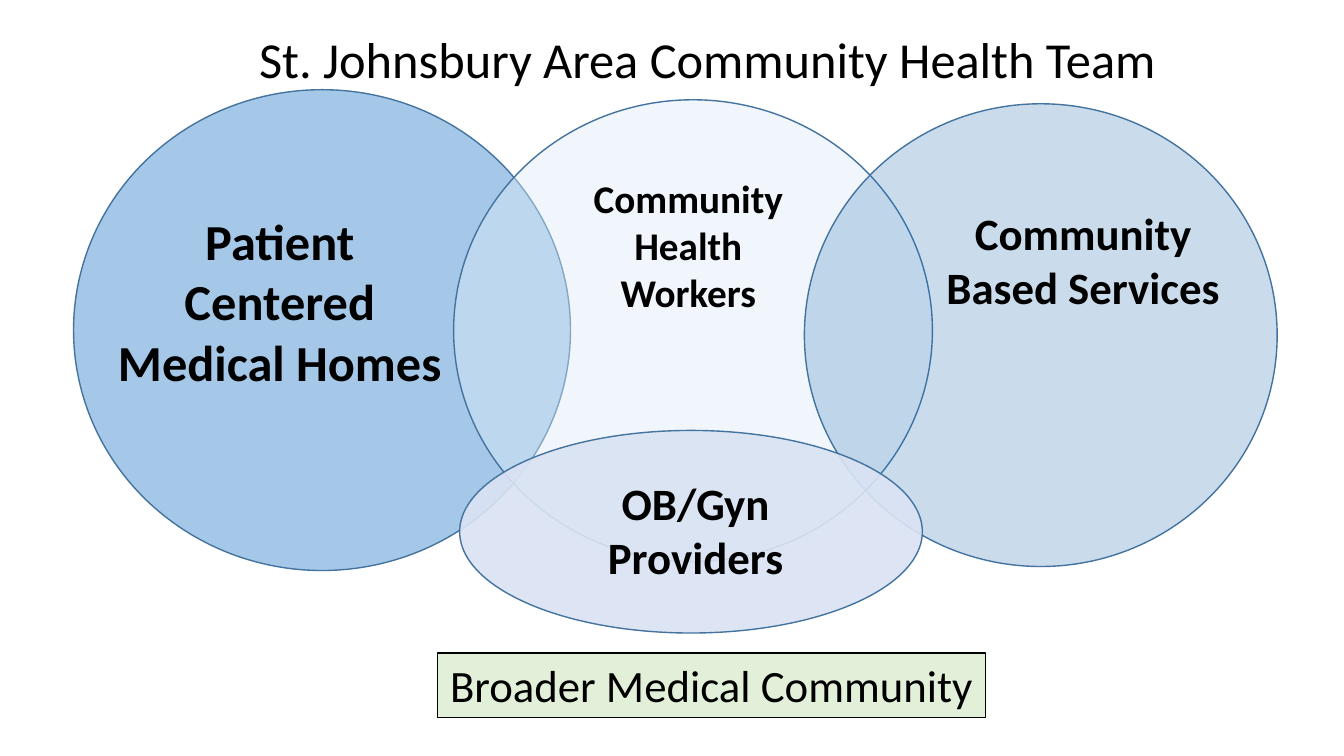
from dataclasses import dataclass

from lxml.etree import SubElement
from pptx import Presentation
from pptx.dml.color import RGBColor
from pptx.enum.shapes import MSO_SHAPE as Shape
from pptx.enum.text import MSO_ANCHOR as Anchor, MSO_AUTO_SIZE as AutoSize, PP_ALIGN as Align
from pptx.oxml.ns import qn
from pptx.util import Inches, Pt


@dataclass(frozen=True)
class Theme:
    font: str = "Calibri"
    ink: str = "000000"
    outline: str = "43739E"
    homes: str = "9DC3E6"
    workers: str = "DEEBF7"
    services: str = "2E75B6"
    providers: str = "DAE3F3"
    banner: str = "E2F0D9"
    large: int = 36
    medium: int = 32
    small: int = 28
    line: int = 1


@dataclass(frozen=True)
class Box:
    left: float
    top: float
    width: float
    height: float

    def inner(self, left, top, width, height):
        return Box(
            self.left + left * self.width,
            self.top + top * self.height,
            width * self.width,
            height * self.height,
        )

    def lengths(self):
        return [Inches(cells * CELL) for cells in (self.left, self.top, self.width, self.height)]


THEME = Theme()
CELL = 0.1
SLIDE = Box(0, 0, 133.33, 75)

GROUPS = [
    ("Patient Centered Medical Homes", Box(7.3, 8.9, 49.3, 47.7),
     THEME.homes, 91, (0.05, 0.24, 0.73, 0.4), THEME.large),
    ("Community Health Workers", Box(45, 9.9, 47.5, 45.8),
     THEME.workers, 43, (0.24, 0.15, 0.5, 0.33), THEME.small),
    ("Community Based Services", Box(79.8, 10.3, 46.9, 45.9),
     THEME.services, 25, (0.26, 0.21, 0.66, 0.26), THEME.medium),
    ("OB/Gyn Providers", Box(45.6, 42.7, 45.9, 20.1),
     THEME.providers, 91, (0.26, 0.2, 0.5, 0.59), THEME.medium),
]


def write(shape, text, size, bold=False, align=Align.CENTER, wrap=True):
    frame = shape.text_frame
    frame.text = text
    frame.word_wrap = wrap
    frame.auto_size = AutoSize.SHAPE_TO_FIT_TEXT
    frame.vertical_anchor = Anchor.TOP
    para = frame.paragraphs[0]
    para.alignment = align
    font = para.runs[0].font
    font.name, font.size, font.bold = THEME.font, Pt(size), bold
    font.color.rgb = RGBColor.from_string(THEME.ink)


def add_panel(page, kind, box, fill, line, opacity=100):
    panel = page.shapes.add_shape(kind, *box.lengths())
    panel.shadow.inherit = False
    panel.fill.solid()
    panel.fill.fore_color.rgb = RGBColor.from_string(fill)
    panel.line.color.rgb = RGBColor.from_string(line)
    panel.line.width = Pt(THEME.line)
    if opacity < 100:
        color = panel.fill._xPr.find(qn("a:solidFill"))[0]
        SubElement(color, qn("a:alpha")).set("val", str(opacity * 1000))
    return panel


def add_title(page, box, text):
    title = page.shapes.title
    title.left, title.top, title.width, title.height = box.lengths()
    write(title, text, THEME.large, align=Align.LEFT, wrap=False)


def add_group(page, box, text, fill, opacity, label_share, size):
    add_panel(page, Shape.OVAL, box, fill, THEME.outline, opacity)
    label = page.shapes.add_textbox(*box.inner(*label_share).lengths())
    write(label, text, size, bold=True)


def add_banner(page, box, text):
    banner = add_panel(page, Shape.RECTANGLE, box, THEME.banner, THEME.ink)
    write(banner, text, THEME.medium, wrap=False)


def add_team_slide(deck):
    title_only = deck.slide_layouts[5]
    page = deck.slides.add_slide(title_only)
    add_title(page, Box(24.7, 2.3, 91.8, 7.1), "St. Johnsbury Area Community Health Team")
    for text, box, fill, opacity, label_share, size in GROUPS:
        add_group(page, box, text, fill, opacity, label_share, size)
    add_banner(page, Box(43.4, 64.8, 54.4, 6.4), "Broader Medical Community")


def main():
    deck = Presentation()
    deck.slide_width, deck.slide_height = SLIDE.lengths()[2:]
    add_team_slide(deck)
    deck.save("out.pptx")


if __name__ == "__main__":
    main()
